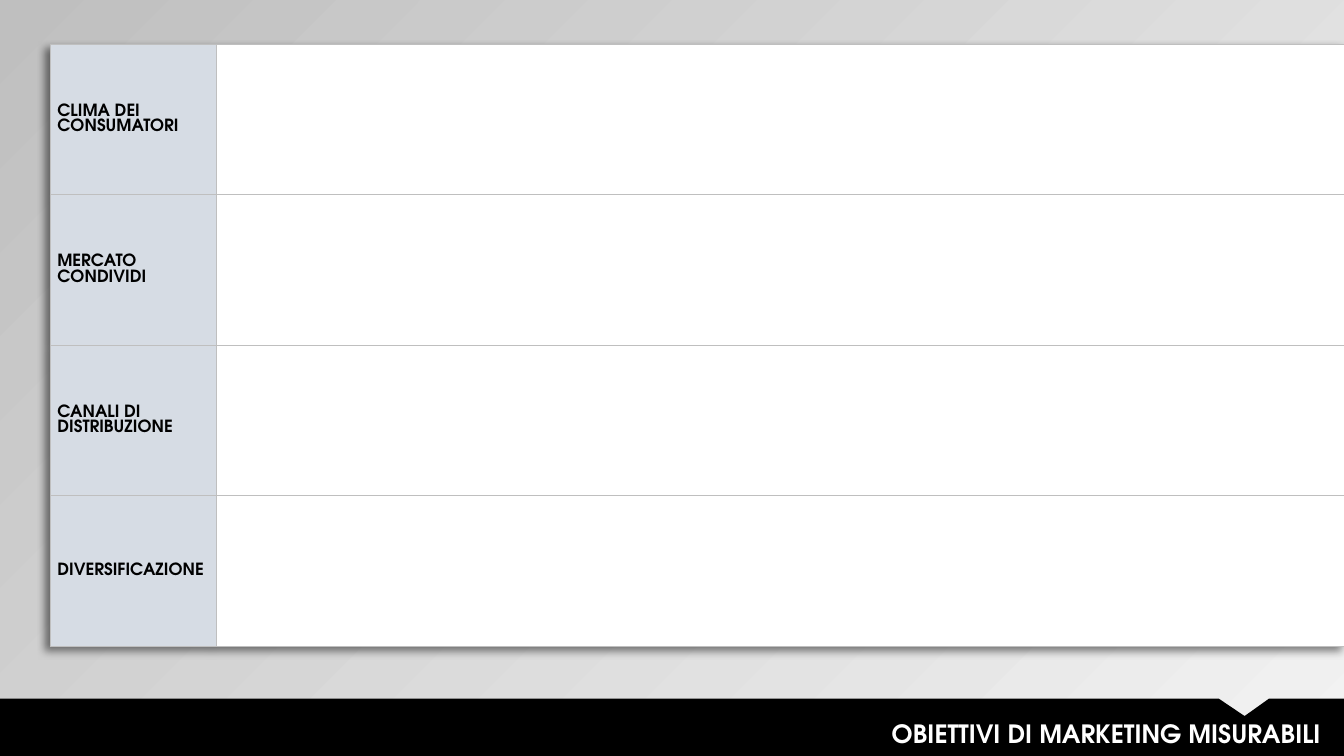
from lxml import etree
from pptx import Presentation
from pptx import util as u
from pptx.dml.color import RGBColor
from pptx.enum import text
from pptx.oxml import parse_xml
from pptx.oxml.ns import nsdecls, qn

Pt = u.Pt
FONT = "TeX Gyre Adventor"
COLORS = {
    "light": "F2F2F2",
    "grey": "BFBFBF",
    "label": "D6DCE4",
    "white": "FFFFFF",
    "black": "000000",
}
GOALS = ["CLIMA DEI CONSUMATORI", "MERCATO\nCONDIVIDI",
         "CANALI DI DISTRIBUZIONE", "DIVERSIFICAZIONE"]


def rgb(name):
    return RGBColor.from_string(COLORS[name])


def style(p, size, color):
    for r in p.runs:
        r.font.name = FONT
        r.font.size = Pt(size)
        r.font.bold = True
        r.font.color.rgb = rgb(color)


def add_background(s):
    fill = s.background.fill
    fill.gradient()
    fill.gradient_angle = 135
    for stop, name, position in zip(fill.gradient_stops, ("light", "grey"), (0, 1)):
        stop.color.rgb = rgb(name)
        stop.position = position


def format_cell(cell, fill):
    cell.fill.solid()
    cell.fill.fore_color.rgb = rgb(fill)
    cell.vertical_anchor = text.MSO_ANCHOR.MIDDLE
    cell.margin_left = cell.margin_right = Pt(5)
    cell.margin_top = cell.margin_bottom = 0
    # Borders come before the fill in the cell properties
    tcPr = cell._tc.get_or_add_tcPr()
    for i, side in enumerate(("lnL", "lnR", "lnT", "lnB")):
        tcPr.insert(i, parse_xml(
            f'<a:{side} {nsdecls("a")} w="{Pt(0.5)}"><a:solidFill>'
            f'<a:srgbClr val="{COLORS["grey"]}"/></a:solidFill></a:{side}>'))


def add_goals_table(s, x, y, w, h, label_w):
    frame = s.shapes.add_table(len(GOALS), 2, Pt(x), Pt(y), Pt(w), Pt(h))
    table = frame.table
    table.first_row = table.horz_banding = False
    table.columns[0].width = Pt(label_w)
    table.columns[1].width = Pt(w - label_w)

    # Soft shadow to the lower left
    tblPr = table._tbl.tblPr
    effects = etree.Element(qn("a:effectLst"))
    shadow = etree.SubElement(effects, qn("a:outerShdw"), blurRad=str(Pt(6)),
                              dist=str(Pt(5)), dir="8100000", algn="tr", rotWithShape="0")
    color = etree.SubElement(shadow, qn("a:srgbClr"), val=COLORS["black"])
    etree.SubElement(color, qn("a:alpha"), val="50000")
    tblPr.insert(0, effects)

    for row, goal in zip(table.rows, GOALS):
        row.height = Pt(h / len(GOALS))
        label, entry = row.cells
        format_cell(label, "label")
        format_cell(entry, "white")
        label.text_frame.text = goal
        for p in label.text_frame.paragraphs:
            p.line_spacing = Pt(11.2)
            style(p, 12, "black")


def add_footer(s, x, y, w, h):
    # Black band with a notch in its upper edge
    fb = s.shapes.build_freeform(Pt(x), Pt(y))
    fb.add_line_segments([(Pt(x + dx), Pt(y + dy)) for dx, dy in (
        (870.5, 0), (889, 12.5), (906.5, 0), (w, 0), (w, h), (0, h))], close=True)
    band = fb.convert_to_shape()
    band.shadow.inherit = False
    band.fill.solid()
    band.fill.fore_color.rgb = rgb("black")
    band.line.fill.background()

    # Title, raised above the band
    title = s.shapes.title
    title.left, title.top = Pt(x + 298), Pt(y + 10.5)
    title.width, title.height = Pt(652.5), Pt(29)
    tf = title.text_frame
    tf.text = "OBIETTIVI DI MARKETING MISURABILI"
    tf.word_wrap = True
    tf.auto_size = text.MSO_AUTO_SIZE.NONE
    tf.vertical_anchor = text.MSO_ANCHOR.MIDDLE
    p = tf.paragraphs[0]
    p.alignment = text.PP_ALIGN.RIGHT
    style(p, 18, "white")
    band._element.addnext(title._element)


def main():
    prs = Presentation()
    prs.slide_width, prs.slide_height = Pt(960), Pt(540)
    s = prs.slides.add_slide(prs.slide_layouts[5])
    add_background(s)
    add_goals_table(s, 36, 31.5, 925, 430, 118.5)
    add_footer(s, 0, 499, 960, 41)
    prs.save("out.pptx")


if __name__ == "__main__":
    main()
